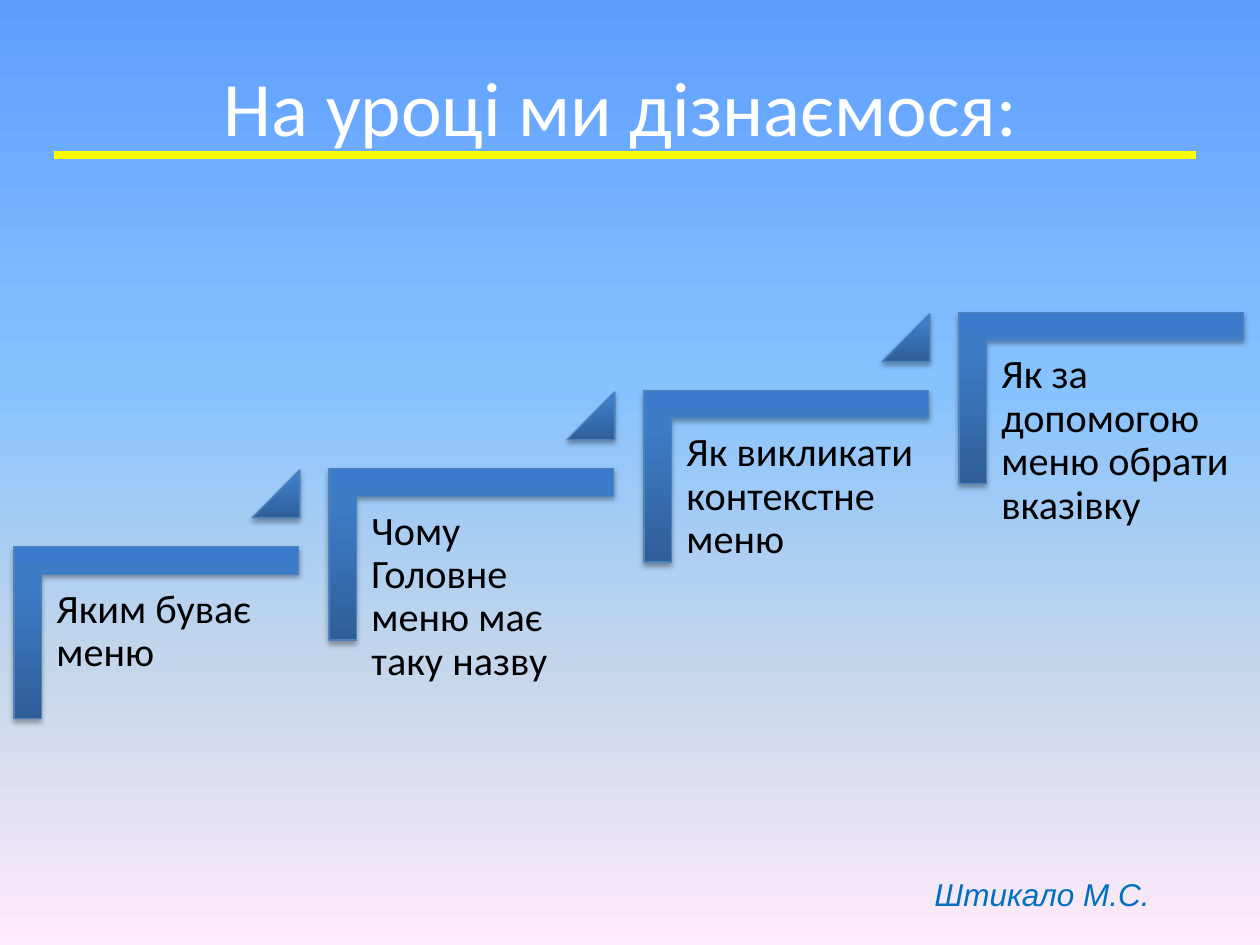
import pptx
import pptx.dml.color
import pptx.enum.shapes
import pptx.enum.text
import pptx.oxml
import pptx.oxml.ns
import pptx.util
from dataclasses import dataclass

Inches = pptx.util.Inches
Pt = pptx.util.Pt
Shape = pptx.enum.shapes.MSO_SHAPE
Align = pptx.enum.text.PP_ALIGN
Anchor = pptx.enum.text.MSO_ANCHOR
qn = pptx.oxml.ns.qn
NAMESPACE = pptx.oxml.ns.nsdecls("a")

TITLE = "На уроці ми дізнаємося:"
STEPS = [
    "Яким буває меню",
    "Чому Головне меню має таку назву",
    "Як викликати контекстне меню",
    "Як за допомогою меню обрати вказівку",
]
AUTHOR = "Штикало М.С."


@dataclass(frozen=True)
class Theme:
    background: tuple = ((0, "5E9EFF"), (40, "85C2FF"), (70, "C4D6EB"), (100, "FFEBFA"))
    step_fill: tuple = ((0, "2F5F99"), (80, "3D7CC7"), (100, "3A7CCB"))
    step_line: str = "4F81BD"
    title: str = "FFFFFF"
    body: str = "000000"
    rule: str = "FFFF00"
    author: str = "0070C0"
    body_font: str = "Calibri"
    author_font: str = "Arial"
    title_size: int = 44
    body_size: int = 23
    author_size: int = 18


THEME = Theme()

STEP_RIGHT, STEP_UP = 2.5, 0.62
CORNER_BOX = (0.56, 3.89, 1.36, 2.26)
LABEL_BOX = (0.35, 4.57, 2.04, 1.79)
TRIANGLE_BOX = (2.0, 3.73, 0.38, 0.38)


def color(value):
    return pptx.dml.color.RGBColor.from_string(value)


def place(box, index):
    left, top, width, height = box
    return [Inches(value) for value in
            (left + index * STEP_RIGHT, top - index * STEP_UP, width, height)]


def set_gradient(fill, element, stops, angle):
    fill.gradient()
    gradient = element.find(".//" + qn("a:gradFill"))
    stop_xml = "".join(
        f'<a:gs pos="{position * 1000}"><a:srgbClr val="{value}"/></a:gs>'
        for position, value in stops)
    replacement = pptx.oxml.parse_xml(
        f'<a:gradFill {NAMESPACE} rotWithShape="0"><a:gsLst>{stop_xml}</a:gsLst>'
        f'<a:lin ang="{angle * 60000}" scaled="0"/></a:gradFill>')
    gradient.getparent().replace(gradient, replacement)


def add_step_shape(slide, kind, box, adjustments, rotation=0):
    shape = slide.shapes.add_shape(kind, *box)
    shape.rotation = rotation
    for number, value in enumerate(adjustments):
        shape.adjustments[number] = value
    set_gradient(shape.fill, shape._element, THEME.step_fill, 270)
    shape.line.color.rgb = color(THEME.step_line)
    shape.line.width = Pt(0.75)
    shape.shadow.inherit = False
    effects = shape._element.spPr.find(qn("a:effectLst"))
    effects.append(pptx.oxml.parse_xml(
        f'<a:outerShdw {NAMESPACE} blurRad="{Pt(3.1)}" dist="{Pt(1.8)}" dir="5400000"'
        ' rotWithShape="0"><a:srgbClr val="000000"><a:alpha val="35000"/>'
        '</a:srgbClr></a:outerShdw>'))


def add_text(slide, text, box, font_name, size, font_color,
             align=Align.CENTER, anchor=Anchor.MIDDLE, italic=False):
    text_box = slide.shapes.add_textbox(*box)
    frame = text_box.text_frame
    frame.word_wrap = True
    frame.vertical_anchor = anchor
    paragraph = frame.paragraphs[0]
    paragraph.text = text
    paragraph.alignment = align
    font = paragraph.font
    font.name = font_name
    font.size = Pt(size)
    font.italic = italic
    font.color.rgb = color(font_color)
    return frame


def add_step(slide, index, text):
    add_step_shape(slide, Shape.CORNER, place(CORNER_BOX, index), (0.161, 0.161), 90)
    frame = add_text(slide, text, place(LABEL_BOX, index), THEME.body_font,
                     THEME.body_size, THEME.body, Align.LEFT, Anchor.TOP)
    frame.margin_left = frame.margin_right = Inches(0.1)
    frame.margin_top = frame.margin_bottom = Inches(0.1)
    frame.paragraphs[0].line_spacing = 0.9
    if index < len(STEPS) - 1:
        add_step_shape(slide, Shape.ISOSCELES_TRIANGLE, place(TRIANGLE_BOX, index), (1,))


def add_rule(slide):
    rule = slide.shapes.add_connector(
        pptx.enum.shapes.MSO_CONNECTOR.STRAIGHT,
        Inches(0.43), Inches(1.23), Inches(9.49), Inches(1.23))
    rule.line.color.rgb = color(THEME.rule)
    rule.line.width = Pt(5)
    rule._element.spPr.append(pptx.oxml.parse_xml(f"<a:effectLst {NAMESPACE}/>"))


def main():
    presentation = pptx.Presentation()
    presentation.slide_width = Inches(10)
    presentation.slide_height = Inches(7.5)
    slide = presentation.slides.add_slide(presentation.slide_layouts[6])
    set_gradient(slide.background.fill, slide._element, THEME.background, 90)

    add_text(slide, TITLE, place((0.43, 0.21, 9, 1.25), 0), THEME.body_font,
             THEME.title_size, THEME.title)
    for index, text in enumerate(STEPS):
        add_step(slide, index, text)
    add_rule(slide)
    add_text(slide, AUTHOR, place((7.13, 6.9, 2.28, 0.39), 0), THEME.author_font,
             THEME.author_size, THEME.author, italic=True)
    presentation.save("out.pptx")


if __name__ == "__main__":
    main()
